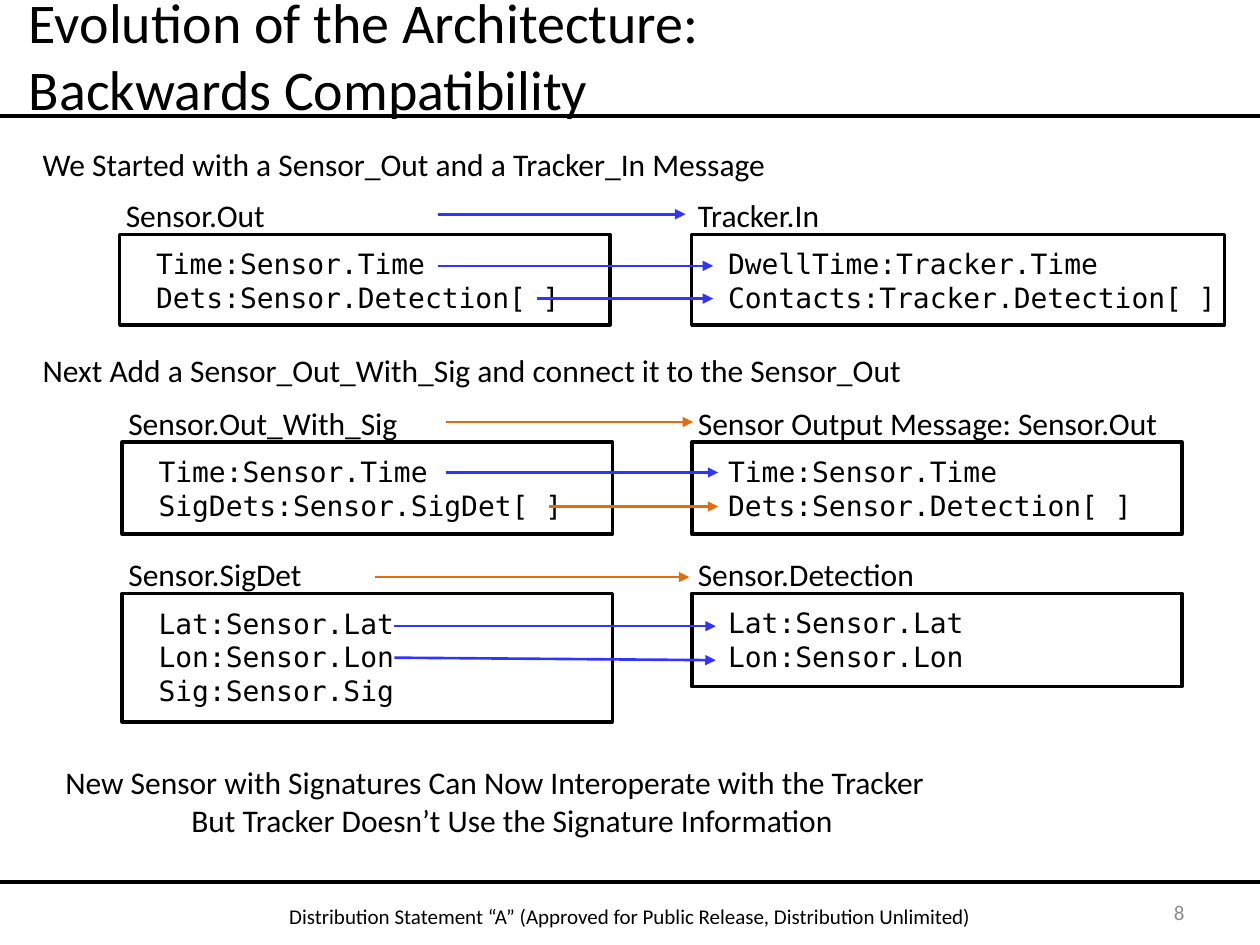
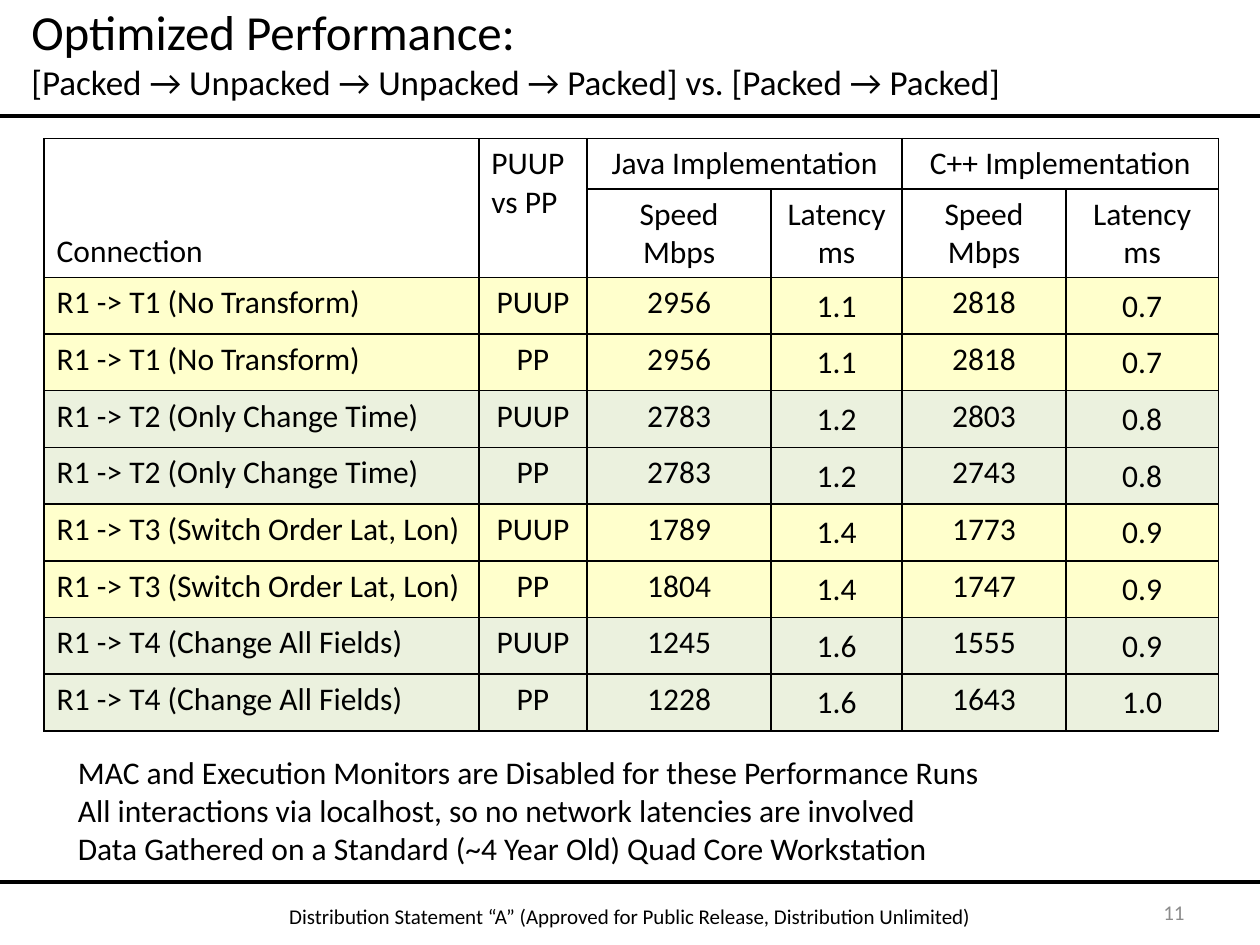
import lxml.etree
import pptx
import pptx.dml.color
import pptx.enum.shapes
import pptx.enum.text
import pptx.oxml
import pptx.oxml.ns
import pptx.util

ALIGN = pptx.enum.text.PP_ALIGN
ANCHOR = pptx.enum.text.MSO_ANCHOR
BLACK, GREY, BLUE, ORANGE = "000000", "8C8C8C", "3333FF", "E46C0A"
YELLOW, GREEN = "FFFFCC", "EBF1DE"
FOOTER = "Distribution Statement “A” (Approved for Public Release, Distribution Unlimited)"


def px(length):
    return pptx.util.Emu(length * 9144)


def color(code):
    return pptx.dml.color.RGBColor.from_string(code)


class Deck:
    font = "Calibri"
    code_font = "DejaVu Sans Mono"
    body_size = 18

    def __init__(self, width, height):
        self.width = width
        self.presentation = pptx.Presentation()
        self.presentation.slide_width = px(width)
        self.presentation.slide_height = px(height)
        self.slide = None

    def start_slide(self, number, title_box, title_runs):
        layout = self.presentation.slide_layouts[6]
        self.slide = self.presentation.slides.add_slide(layout)
        for y in (92, 700):
            self.line((self.width, y), (0, y), BLACK, 2.25)
        self.text((0, 712, self.width, 34), [FOOTER], 12, align=ALIGN.CENTER)
        self.title(title_box, title_runs)
        self.text((717, 704, 233, 40), [str(number)], 12, GREY, ALIGN.RIGHT, ANCHOR.MIDDLE)

    def run(self, paragraph, words, size, code=BLACK, font=None):
        run = paragraph.add_run()
        run.text = words
        run.font.name = font or self.font
        run.font.size = pptx.util.Pt(size)
        run.font.color.rgb = color(code)

    def fill_frame(self, frame, lines, size, code=BLACK, align=ALIGN.LEFT, font=None, indents=()):
        for index, words in enumerate(lines):
            paragraph = frame.add_paragraph() if index else frame.paragraphs[0]
            paragraph.alignment = align
            if indents and indents[index]:
                paragraph._p.get_or_add_pPr().set("marL", str(px(indents[index])))
            self.run(paragraph, words, size, code, font)

    def text(self, box, lines, size=body_size, code=BLACK, align=ALIGN.LEFT,
             anchor=ANCHOR.TOP, wrap=True, indents=()):
        frame = self.slide.shapes.add_textbox(*map(px, box)).text_frame
        frame.word_wrap = wrap
        frame.vertical_anchor = anchor
        if not wrap:
            frame.auto_size = pptx.enum.text.MSO_AUTO_SIZE.SHAPE_TO_FIT_TEXT
        self.fill_frame(frame, lines, size, code, align, indents=indents)

    def title(self, box, runs):
        frame = self.slide.shapes.add_textbox(*map(px, box)).text_frame
        frame.word_wrap = True
        frame.vertical_anchor = ANCHOR.MIDDLE
        paragraph = frame.paragraphs[0]
        for index, (words, size) in enumerate(runs):
            if index:
                paragraph.add_line_break()
            self.run(paragraph, words, size)

    def line(self, start, end, code, weight=1.5, arrow=False):
        straight = pptx.enum.shapes.MSO_CONNECTOR.STRAIGHT
        connector = self.slide.shapes.add_connector(straight, *map(px, start + end))
        connector.line.color.rgb = color(code)
        connector.line.width = pptx.util.Pt(weight)
        if arrow:
            tail = lxml.etree.SubElement(connector.line._get_or_add_ln(), pptx.oxml.ns.qn("a:tailEnd"))
            tail.set("type", "triangle")
        lxml.etree.SubElement(connector._element.spPr, pptx.oxml.ns.qn("a:effectLst"))

    def message(self, name, name_width, box, fields):
        left, top = box[:2]
        rectangle = pptx.enum.shapes.MSO_SHAPE.RECTANGLE
        shape = self.slide.shapes.add_shape(rectangle, *map(px, box))
        shape.shadow.inherit = False
        shape.fill.background()
        shape.line.color.rgb = color(BLACK)
        shape.line.width = pptx.util.Pt(2)
        frame = shape.text_frame
        frame.word_wrap = True
        frame.vertical_anchor = ANCHOR.TOP
        frame.margin_left = frame.margin_top = px(10)
        frame.margin_right = frame.margin_bottom = 0
        self.fill_frame(frame, fields, 16, font=self.code_font, indents=[19] * len(fields))
        self.text((left - 5, top - 35, name_width, 40), [name], wrap=False)

    def table(self, left, top, widths, heights):
        frame = self.slide.shapes.add_table(
            len(heights), len(widths), px(left), px(top), px(sum(widths)), px(sum(heights)))
        table = frame.table
        table.first_row = table.horz_banding = False
        for column, width in zip(table.columns, widths):
            column.width = px(width)
        for row, height in zip(table.rows, heights):
            row.height = px(height)
        for cell in table.iter_cells():
            self.border(cell)
            cell.fill.background()
        return table

    def border(self, cell):
        properties = cell._tc.get_or_add_tcPr()
        for side in "LRTB":
            properties.append(pptx.oxml.parse_xml(
                f'<a:ln{side} {pptx.oxml.ns.nsdecls("a")} w="12700"><a:solidFill>'
                f'<a:srgbClr val="{BLACK}"/></a:solidFill></a:ln{side}>'))

    def cell(self, cell, lines, align=ALIGN.CENTER, anchor=ANCHOR.TOP, fill=None, tight=False):
        cell.vertical_anchor = anchor
        if fill:
            cell.fill.solid()
            cell.fill.fore_color.rgb = color(fill)
        if tight:
            cell.margin_left = cell.margin_right = cell.margin_top = px(1)
            cell.margin_bottom = 0
        self.fill_frame(cell.text_frame, lines, self.body_size, align=align)


def build_compatibility(deck):
    deck.start_slide(8, (13, 7, 821, 73), [
        ("Evolution of the Architecture: ", 32), ("Backwards Compatibility", 32)])
    messages = [
        ("Sensor.Out", 132, (95, 186, 389, 72),
         ["Time:Sensor.Time", "Dets:Sensor.Detection[ ]"]),
        ("Tracker.In", 117, (549, 186, 423, 72),
         ["DwellTime:Tracker.Time", "Contacts:Tracker.Detection[ ]"]),
        ("Sensor.Out_With_Sig", 236, (97, 351, 389, 73),
         ["Time:Sensor.Time", "SigDets:Sensor.SigDet[ ]"]),
        ("Sensor Output Message: Sensor.Out", 398, (549, 351, 389, 73),
         ["Time:Sensor.Time", "Dets:Sensor.Detection[ ]"]),
        ("Sensor.SigDet", 159, (97, 471, 389, 102),
         ["Lat:Sensor.Lat", "Lon:Sensor.Lon", "Sig:Sensor.Sig"]),
        ("Sensor.Detection", 194, (549, 471, 389, 74),
         ["Lat:Sensor.Lat", "Lon:Sensor.Lon"]),
    ]
    for message in messages:
        deck.message(*message)
    mappings = [
        ((348, 170), (544, 170), BLUE),
        ((348, 211), (566, 211), BLUE),
        ((426, 237), (566, 237), BLUE),
        ((354, 335), (550, 335), ORANGE),
        ((354, 375), (570, 375), BLUE),
        ((436, 402), (570, 402), ORANGE),
        ((298, 458), (547, 458), ORANGE),
        ((313, 497), (568, 497), BLUE),
        ((313, 522), (568, 524), BLUE),
    ]
    for start, end, code in mappings:
        deck.line(start, end, code, arrow=True)
    deck.text((24, 110, 600, 40),
              ["We Started with a Sensor_Out and a Tracker_In Message"], wrap=False)
    deck.text((24, 274, 721, 40),
              ["Next Add a Sensor_Out_With_Sig and connect it to the Sensor_Out"], wrap=False)
    deck.text((42, 601, 710, 71),
              ["New Sensor with Signatures Can Now Interoperate with the Tracker",
               "But Tracker Doesn’t Use the Signature Information"],
              wrap=False, indents=(0, 100))


def build_performance(deck):
    deck.start_slide(11, (15, 0, 818, 83), [
        ("Optimized Performance:", 28),
        ("[Packed → Unpacked → Unpacked → Packed] vs. [Packed → Packed]", 20)])
    deck.text((52, 593, 744, 101),
              ["MAC and Execution Monitors are Disabled for these Performance Runs",
               "All interactions via localhost, so no network latencies are involved",
               "Data Gathered on a Standard (~4 Year Old) Quad Core Workstation"], wrap=False)

    results = [
        ("R1 -> T1 (No Transform)", YELLOW,
         ("2956", "1.1", "2818", "0.7"), ("2956", "1.1", "2818", "0.7")),
        ("R1 -> T2 (Only Change Time)", GREEN,
         ("2783", "1.2", "2803", "0.8"), ("2783", "1.2", "2743", "0.8")),
        ("R1 -> T3 (Switch Order Lat, Lon)", YELLOW,
         ("1789", "1.4", "1773", "0.9"), ("1804", "1.4", "1747", "0.9")),
        ("R1 -> T4 (Change All Fields)", GREEN,
         ("1245", "1.6", "1555", "0.9"), ("1228", "1.6", "1643", "1.0")),
    ]
    table = deck.table(35, 110, [345, 86, 146, 104, 130, 121], [40, 70] + [45] * 8)
    for first, last in [((0, 0), (1, 0)), ((0, 1), (1, 1)), ((0, 2), (0, 3)), ((0, 4), (0, 5))]:
        table.cell(*first).merge(table.cell(*last))
    deck.cell(table.cell(0, 0), ["Connection"], ALIGN.LEFT, ANCHOR.BOTTOM)
    deck.cell(table.cell(0, 1), ["PUUP", "vs PP"], ALIGN.LEFT)
    deck.cell(table.cell(0, 2), ["Java Implementation"])
    deck.cell(table.cell(0, 4), ["C++ Implementation"])
    measures = [["Speed", "Mbps"], ["Latency", "ms"], ["Speed Mbps"], ["Latency", "ms"]]
    for column, measure in enumerate(measures, 2):
        deck.cell(table.cell(1, column), measure)

    row = 2
    for connection, fill, unpacked, packed in results:
        for mode, values in (("PUUP", unpacked), ("PP", packed)):
            deck.cell(table.cell(row, 0), [connection], ALIGN.LEFT, fill=fill)
            for column, value in enumerate((mode,) + values, 1):
                latency = column in (3, 5)
                deck.cell(table.cell(row, column), [value], fill=fill, tight=latency,
                          anchor=ANCHOR.MIDDLE if latency else ANCHOR.TOP)
            row += 1


def main():
    deck = Deck(1000, 750)
    build_compatibility(deck)
    build_performance(deck)
    deck.presentation.save("out.pptx")


if __name__ == "__main__":
    main()
